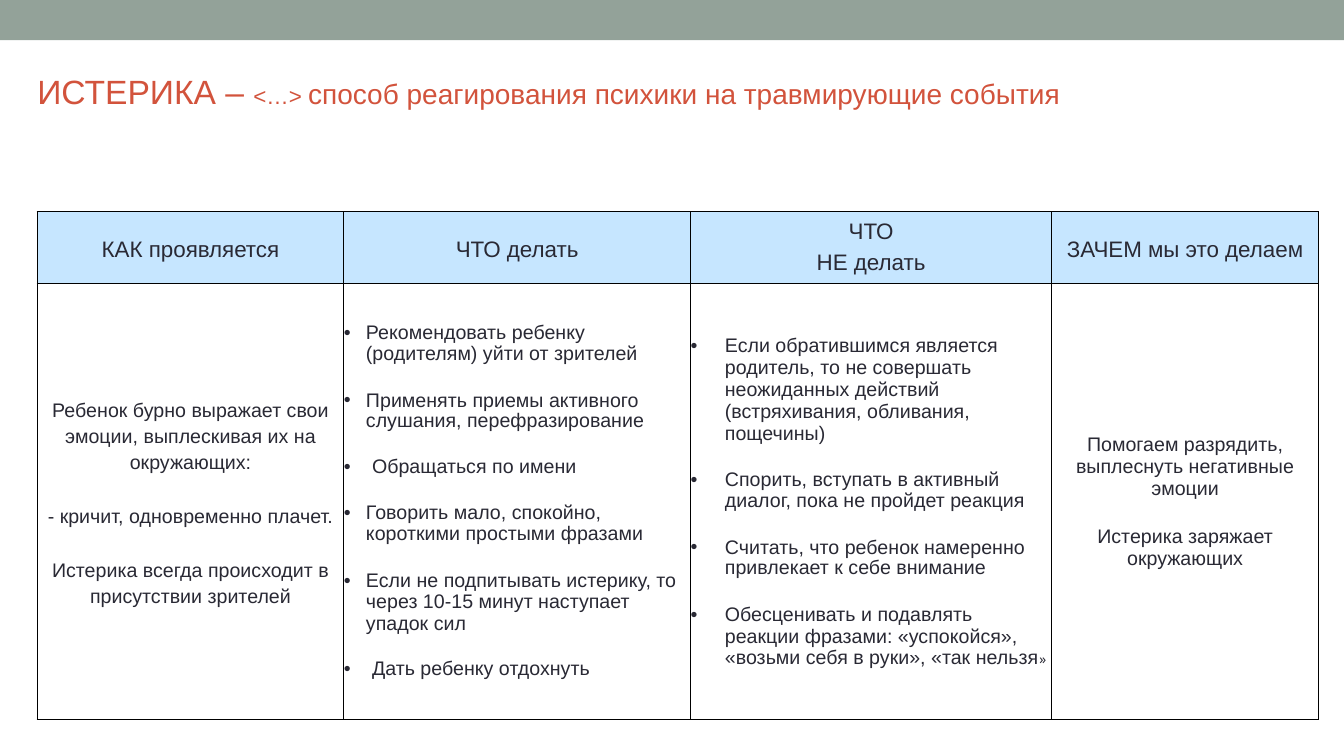
from dataclasses import dataclass

from lxml.etree import SubElement
from pptx import Presentation
from pptx.dml.color import RGBColor
from pptx.enum.shapes import MSO_SHAPE
from pptx.enum.text import MSO_ANCHOR as Anchor, PP_ALIGN as Align
from pptx.oxml.ns import qn
from pptx.util import Inches, Pt


@dataclass(frozen=True)
class Theme:
    font: str = "Arial"
    quote_font: str = "Noto Sans Mono"
    bar: str = "93A299"
    title: str = "D2533C"
    text: str = "292934"
    header: str = "C6E6FF"
    border: str = "000000"
    title_size: float = 24
    subtitle_size: float = 20
    header_size: float = 16
    body_size: float = 14
    small_size: float = 10
    border_width: float = 1


@dataclass(frozen=True)
class Item:
    text: str
    spacing: float = 1
    hang: float = 0.22
    ending: str = ""


@dataclass(frozen=True)
class Column:
    width: float
    header: list[Item]
    body: list[Item]
    gap: float = 0
    bulleted: bool = False


THEME = Theme()
HEADER_GAP = 4.2
ROW_HEIGHTS = (0.71, 4.33)

COLUMNS = [
    Column(3.04, [Item("КАК проявляется", 1.19)], [
        Item("Ребенок бурно выражает свои эмоции, выплескивая их на окружающих:", 1.19),
        Item("- кричит, одновременно плачет.", 1.19),
        Item("Истерика всегда происходит в присутствии зрителей", 1.19),
    ], gap=19.6),
    Column(3.44, [Item("ЧТО делать", 1.19)], [
        Item("Рекомендовать ребенку (родителям) уйти от зрителей", 0.95),
        Item("Применять приемы активного слушания, перефразирование", 0.95),
        Item("Обращаться по имени", 0.91, hang=0.28),
        Item("Говорить мало, спокойно, короткими простыми фразами", 0.95),
        Item("Если не подпитывать истерику, то через 10-15 минут наступает упадок сил", 0.97),
        Item("Дать ребенку отдохнуть", 0.91, hang=0.28),
    ], gap=18.2, bulleted=True),
    Column(3.58, [Item("ЧТО"), Item("НЕ делать")], [
        Item("Если обратившимся является родитель, то не совершать неожиданных действий "
             "(встряхивания, обливания, пощечины)", hang=0.34),
        Item("Спорить, вступать в активный диалог, пока не пройдет реакция", 0.95, 0.34),
        Item("Считать, что ребенок намеренно привлекает к себе внимание", 0.95, 0.34),
        Item("Обесценивать и подавлять реакции фразами: «успокойся», «возьми себя в руки», "
             "«так нельзя", 0.97, 0.34, ending="»"),
    ], gap=18.2, bulleted=True),
    Column(2.65, [Item("ЗАЧЕМ мы это делаем", 1.19)], [
        Item("Помогаем разрядить, выплеснуть негативные эмоции"),
        Item("Истерика заряжает окружающих"),
    ], gap=18.9),
]


def add_text(paragraph, text: str, *, size: float, color: str = THEME.text,
             font: str = THEME.font) -> None:
    run = paragraph.add_run()
    run.text = text
    run.font.size = Pt(size)
    run.font.name = font
    run.font.color.rgb = RGBColor.from_string(color)


def clear_margins(box) -> None:
    box.margin_left = box.margin_right = box.margin_top = box.margin_bottom = 0


def add_bullet(paragraph, hang: float) -> None:
    properties = paragraph._p.get_or_add_pPr()
    properties.set("marL", str(Inches(hang)))
    properties.set("indent", str(-Inches(hang)))
    SubElement(properties, qn("a:buFont"), typeface=THEME.font)
    SubElement(properties, qn("a:buChar"), char="•")


def add_borders(cell) -> None:
    properties = cell._tc.get_or_add_tcPr()
    for side in ("lnL", "lnR", "lnT", "lnB"):
        line = SubElement(properties, qn(f"a:{side}"), w=str(Pt(THEME.border_width)))
        fill = SubElement(line, qn("a:solidFill"))
        SubElement(fill, qn("a:srgbClr"), val=THEME.border)


def fill_cell(cell, items: list[Item], size: float, gap: float, bulleted: bool = False) -> None:
    clear_margins(cell)
    cell.vertical_anchor = Anchor.MIDDLE
    add_borders(cell)
    frame = cell.text_frame
    for index, item in enumerate(items):
        paragraph = frame.add_paragraph() if index else frame.paragraphs[0]
        paragraph.alignment = Align.LEFT if bulleted else Align.CENTER
        paragraph.line_spacing = item.spacing
        paragraph.space_after = Pt(gap if index < len(items) - 1 else 0)
        if bulleted:
            add_bullet(paragraph, item.hang)
        add_text(paragraph, item.text, size=size)
        if item.ending:
            add_text(paragraph, item.ending, size=THEME.small_size, font=THEME.quote_font)


def add_bar(slide, width: int) -> None:
    bar = slide.shapes.add_shape(MSO_SHAPE.RECTANGLE, 0, 0, width, Inches(0.4))
    bar.shadow.inherit = False
    bar.fill.solid()
    bar.fill.fore_color.rgb = RGBColor.from_string(THEME.bar)
    bar.line.fill.background()


def add_title(slide) -> None:
    box = slide.shapes.add_textbox(Inches(0.37), Inches(0.7), Inches(10.87), Inches(0.45))
    frame = box.text_frame
    clear_margins(frame)
    frame.word_wrap = False
    for text, size in (
        ("ИСТЕРИКА – ", THEME.title_size),
        ("<…> ", THEME.header_size),
        ("способ реагирования психики на травмирующие события", THEME.subtitle_size),
    ):
        add_text(frame.paragraphs[0], text, size=size, color=THEME.title)


def add_advice_table(slide) -> None:
    width = sum(column.width for column in COLUMNS)
    table = slide.shapes.add_table(
        len(ROW_HEIGHTS), len(COLUMNS), Inches(0.37), Inches(2.1),
        Inches(width), Inches(sum(ROW_HEIGHTS))).table
    table.first_row = False
    table.horz_banding = False
    for row, height in zip(table.rows, ROW_HEIGHTS):
        row.height = Inches(height)
    for index, column in enumerate(COLUMNS):
        table.columns[index].width = Inches(column.width)
        header, body = table.cell(0, index), table.cell(1, index)
        fill_cell(header, column.header, THEME.header_size, HEADER_GAP)
        header.fill.solid()
        header.fill.fore_color.rgb = RGBColor.from_string(THEME.header)
        fill_cell(body, column.body, THEME.body_size, column.gap, column.bulleted)
        body.fill.background()


def main() -> None:
    presentation = Presentation()
    presentation.slide_width = Inches(13.33)
    presentation.slide_height = Inches(7.5)
    slide = presentation.slides.add_slide(presentation.slide_layouts[6])
    add_bar(slide, presentation.slide_width)
    add_title(slide)
    add_advice_table(slide)
    presentation.save("out.pptx")


if __name__ == "__main__":
    main()
